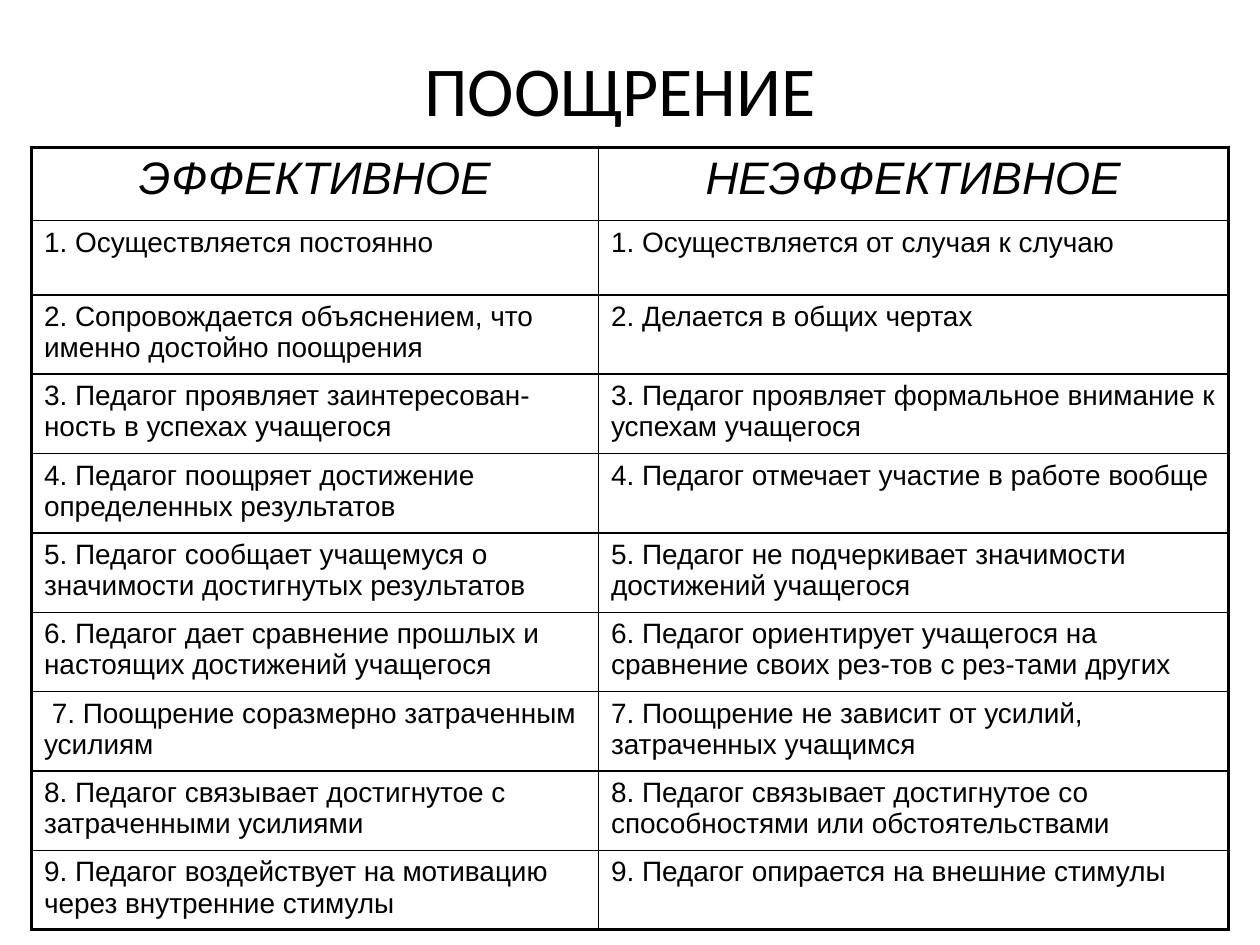
from lxml.etree import SubElement
from pptx import Presentation
from pptx.dml.color import RGBColor
from pptx.enum.text import MSO_ANCHOR, PP_ALIGN
from pptx.oxml.ns import qn
from pptx.util import Inches, Pt

BLACK = "000000"
THIN, THICK = 1, 2.25
TITLE = "ПООЩРЕНИЕ"
HEADINGS = ("ЭФФЕКТИВНОЕ", "НЕЭФФЕКТИВНОЕ")
COMPARISONS = [
    ("1. Осуществляется постоянно",
     "1. Осуществляется от случая к случаю"),
    ("2. Сопровождается объяснением, что именно достойно поощрения",
     "2. Делается в общих чертах"),
    ("3. Педагог проявляет заинтересован-ность в успехах учащегося",
     "3. Педагог проявляет формальное внимание к успехам учащегося"),
    ("4. Педагог поощряет достижение определенных результатов",
     "4. Педагог отмечает участие в работе вообще"),
    ("5. Педагог сообщает учащемуся о значимости достигнутых результатов",
     "5. Педагог не подчеркивает значимости достижений учащегося"),
    ("6. Педагог дает сравнение прошлых и настоящих достижений учащегося",
     "6. Педагог ориентирует учащегося на сравнение своих рез-тов с рез-тами других"),
    (" 7. Поощрение соразмерно затраченным усилиям",
     "7. Поощрение не зависит от усилий, затраченных учащимся"),
    ("8. Педагог связывает достигнутое с затраченными усилиями",
     "8. Педагог связывает достигнутое со способностями или обстоятельствами"),
    ("9. Педагог воздействует на мотивацию через внутренние стимулы",
     "9. Педагог опирается на внешние стимулы"),
]
COLUMN_WIDTHS = [4.5, 5]
ROW_HEIGHTS = [0.58, 0.59] + [0.63] * 8


def color(value):
    return RGBColor.from_string(value)


def write_text(frame, text, size=16, font="Arial", italic=False, align=PP_ALIGN.LEFT):
    para = frame.paragraphs[0]
    para.alignment = align
    span = para.add_run()
    span.text = text
    span.font.size = Pt(size)
    span.font.name = font
    span.font.italic = italic
    span.font.bold = False
    span.font.color.rgb = color(BLACK)


def add_title(page, text):
    title = page.shapes.title
    title.left, title.top = Inches(0.42), Inches(0.08)
    title.width, title.height = Inches(9), Inches(1.25)
    title.text_frame.vertical_anchor = MSO_ANCHOR.MIDDLE
    write_text(title.text_frame, text, size=40, font="Calibri", align=PP_ALIGN.CENTER)


def set_borders(cell, **widths):
    properties = cell._tc.get_or_add_tcPr()
    for side in "LRTB":
        line = SubElement(properties, qn(f"a:ln{side}"), w=str(Pt(widths[side])))
        fill = SubElement(line, qn("a:solidFill"))
        SubElement(fill, qn("a:srgbClr"), val=BLACK)


def add_comparison_table(page, rows):
    last_row, last_column = len(rows) - 1, len(COLUMN_WIDTHS) - 1
    table = page.shapes.add_table(
        len(rows), len(COLUMN_WIDTHS), Inches(0.25), Inches(1.17),
        Inches(sum(COLUMN_WIDTHS)), Inches(sum(ROW_HEIGHTS))).table
    table.first_row = table.horz_banding = False
    for column, width in zip(table.columns, COLUMN_WIDTHS):
        column.width = Inches(width)
    for row, height in zip(table.rows, ROW_HEIGHTS):
        row.height = Inches(height)
    for r, texts in enumerate(rows):
        style = dict(size=26, italic=True, align=PP_ALIGN.CENTER) if r == 0 else {}
        for c, text in enumerate(texts):
            cell = table.cell(r, c)
            write_text(cell.text_frame, text, **style)
            set_borders(cell,
                        L=THICK if c == 0 else THIN,
                        R=THICK if c == last_column else THIN,
                        T=THICK if r == 0 else THIN,
                        B=THICK if r == last_row else THIN)
            cell.fill.background()


def main():
    deck = Presentation()
    deck.slide_width, deck.slide_height = Inches(10), Inches(7.5)
    page = deck.slides.add_slide(deck.slide_layouts[5])
    add_comparison_table(page, [HEADINGS] + COMPARISONS)
    add_title(page, TITLE)
    deck.save("out.pptx")


if __name__ == "__main__":
    main()
